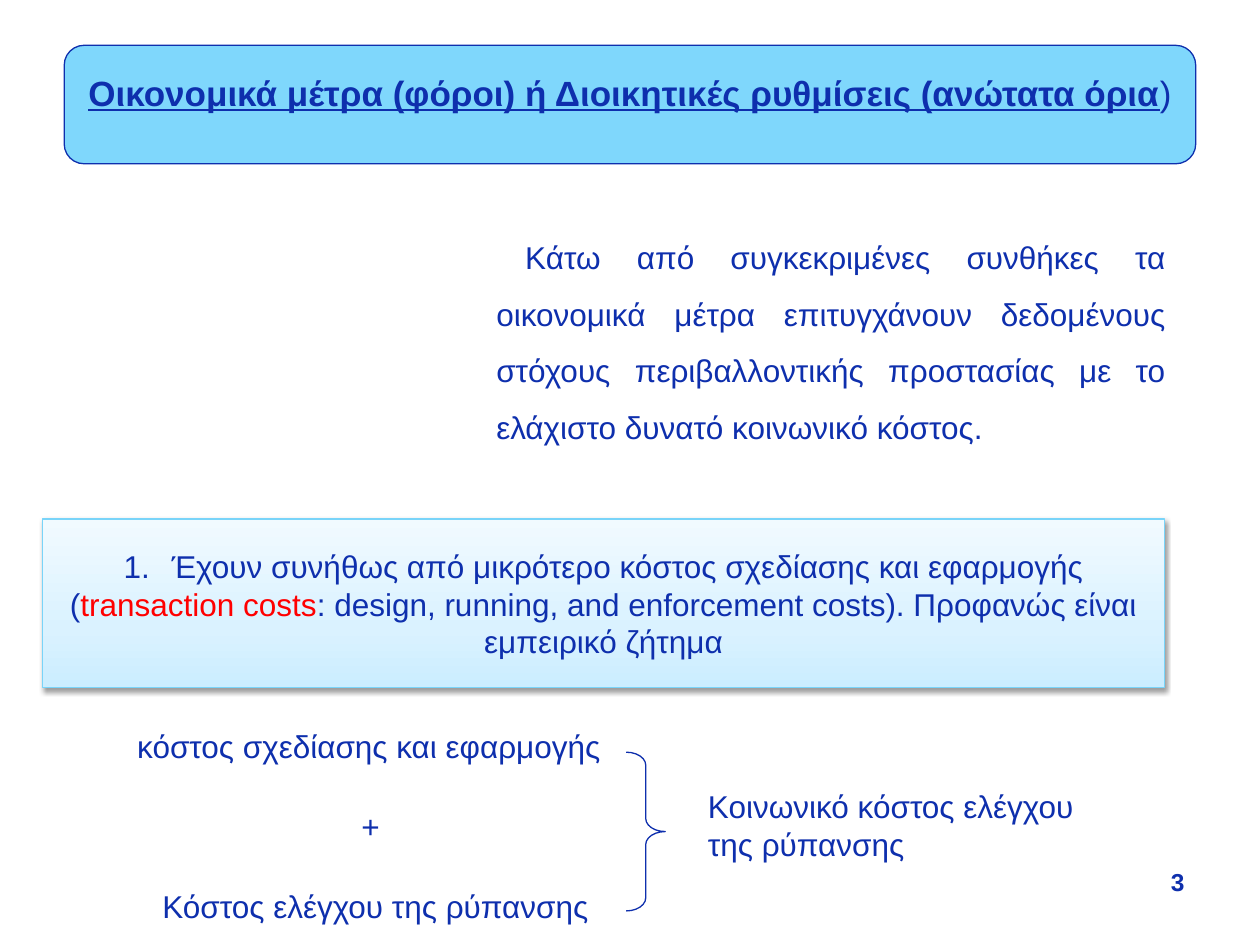
from copy import deepcopy

from lxml import etree
from pptx import Presentation
from pptx.dml.color import RGBColor
from pptx.enum.shapes import MSO_SHAPE
from pptx.enum.text import MSO_ANCHOR, PP_ALIGN
from pptx.oxml.ns import qn
from pptx.util import Inches, Pt

LEFT, CENTER, RIGHT, JUSTIFY = PP_ALIGN.LEFT, PP_ALIGN.CENTER, PP_ALIGN.RIGHT, PP_ALIGN.JUSTIFY
TOP, MIDDLE = MSO_ANCHOR.TOP, MSO_ANCHOR.MIDDLE
ROUNDED, RECTANGLE, BRACE = MSO_SHAPE.ROUNDED_RECTANGLE, MSO_SHAPE.RECTANGLE, MSO_SHAPE.RIGHT_BRACE

THEME = {
    "font": "Arial", "title": 20, "body": 18, "number": 14,
    "ink": "0E2FAD", "accent": "FF0000", "title_fill": "7FD7FC", "panel_line": "79D4F9",
    "panel_stops": [(0, "CBEDFF"), (0.35, "DAF2FF"), (1, "F1FAFF")],
    "line_width": 0.75,
}

# Content: a paragraph is a list of (text, format) runs
TITLE = [[("Οικονομικά μέτρα (φόροι) ή Διοικητικές ρυθμίσεις (ανώτατα όρια", {"bold": True, "underline": True}),
          (")", {})]]
STATEMENT = [[("Κάτω από συγκεκριμένες συνθήκες τα οικονομικά μέτρα επιτυγχάνουν δεδομένους στόχους "
               "περιβαλλοντικής προστασίας με το ελάχιστο δυνατό κοινωνικό κόστος.", {})]]
PANEL = [
    [("Έχουν συνήθως από μικρότερο κόστος σχεδίασης και εφαρμογής", {})],
    [("(", {}), ("transaction costs", {"color": "accent"}),
     (": design, running, and enforcement costs). Προφανώς είναι", {})],
    [("εμπειρικό ζήτημα", {})],
]
COSTS = [  # text, left, width
    ("κόστος σχεδίασης και εφαρμογής", 9.9, 38.9),
    ("+", 27.7, 3.5),
    ("Κόστος ελέγχου της ρύπανσης", 11.9, 36),
]
RESULT = [[("Κοινωνικό κόστος ελέγχου", {})], [("της ρύπανσης", {})]]
PAGE_NUMBER = [[("3", {"bold": True})]]

# Layout: left, top, width, height in hundredths of the slide
AREAS = {
    "title": (5.1, 4.8, 89.8, 12.53),
    "statement": (38.4, 22.53, 55.1, 24.8),
    "panel": (3.4, 54.93, 89, 17.87),
    "brace": (49.7, 79.6, 3.1, 16.8),
    "result": (55.2, 82.67, 31.9, 9.33),
    "number": (71.7, 91.07, 23.3, 6.93),
}
COST_TOP, COST_STEP, COST_HEIGHT = 76.27, 8.47, 5.33
PANEL_INDENT = Inches(0.38)

presentation = Presentation()
presentation.slide_width, presentation.slide_height = Inches(10), Inches(7.5)
slide = presentation.slides.add_slide(presentation.slide_layouts[6])


def color(name):
    return RGBColor.from_string(THEME.get(name, name))


def place(area):
    left, top, width, height = area
    across, down = presentation.slide_width / 100, presentation.slide_height / 100
    return [round(value) for value in (left * across, top * down, width * across, height * down)]


def write(shape, paragraphs, size="body", align=LEFT, anchor=TOP, wrap=False):
    frame = shape.text_frame
    frame.word_wrap, frame.vertical_anchor = wrap, anchor
    for index, runs in enumerate(paragraphs):
        paragraph = frame.add_paragraph() if index else frame.paragraphs[0]
        paragraph.alignment = align
        for text, style in runs:
            run = paragraph.add_run()
            run.text = text
            font = run.font
            font.name, font.size = THEME["font"], Pt(THEME[size])
            font.bold, font.underline = style.get("bold", False), style.get("underline", False)
            font.color.rgb = color(style.get("color", "ink"))
    return frame


def add_text(area, paragraphs, **options):
    return write(slide.shapes.add_textbox(*place(area)), paragraphs, **options)


def add_outlined(kind, area, line="ink"):
    shape = slide.shapes.add_shape(kind, *place(area))
    shape.shadow.inherit = False
    shape.line.color.rgb = color(line)
    shape.line.width = Pt(THEME["line_width"])
    return shape


def fill_gradient(shape, stops):
    shape.fill.gradient()
    shape.fill.gradient_angle = 90
    stop_list = shape._element.spPr.find(".//" + qn("a:gsLst"))
    stop_list.insert(1, deepcopy(stop_list[0]))
    for stop, (position, name) in zip(shape.fill.gradient_stops, stops):
        stop.color.rgb = color(name)
        stop.position = position


def add_soft_shadow(shape):
    effects = shape._element.spPr.find(qn("a:effectLst"))
    shadow = etree.SubElement(effects, qn("a:outerShdw"), blurRad=str(Pt(3.1)), dist=str(Pt(1.6)),
                              dir="5400000", rotWithShape="0")
    black = etree.SubElement(shadow, qn("a:srgbClr"), val="000000")
    etree.SubElement(black, qn("a:alpha"), val="38000")


# Statement and page number
statement = add_text(AREAS["statement"], STATEMENT, align=JUSTIFY, wrap=True).paragraphs[0]
statement.line_spacing = 1.5
statement._p.get_or_add_pPr().set("indent", str(Inches(0.23)))
add_text(AREAS["number"], PAGE_NUMBER, size="number", align=RIGHT, wrap=True)

# Title banner
banner = add_outlined(ROUNDED, AREAS["title"])
banner.adjustments[0] = 0.167
banner.fill.solid()
banner.fill.fore_color.rgb = color("title_fill")
write(banner, TITLE, size="title", align=CENTER).margin_top = Inches(0.16)

# Numbered panel
panel = add_outlined(RECTANGLE, AREAS["panel"], line="panel_line")
fill_gradient(panel, THEME["panel_stops"])
add_soft_shadow(panel)
panel_paragraphs = write(panel, PANEL, align=CENTER, anchor=MIDDLE).paragraphs
for paragraph in panel_paragraphs:
    properties = paragraph._p.get_or_add_pPr()
    properties.set("marL", str(PANEL_INDENT))
    properties.set("indent", str(-PANEL_INDENT))
etree.SubElement(panel_paragraphs[0]._p.pPr, qn("a:buAutoNum"), type="arabicPeriod")

# Costs, brace and their sum
for row, (text, left, width) in enumerate(COSTS):
    add_text((left, COST_TOP + row * COST_STEP, width, COST_HEIGHT), [[(text, {})]])
brace = add_outlined(BRACE, AREAS["brace"])
brace.adjustments[0] = 0.334
brace.fill.background()
add_text(AREAS["result"], RESULT)

presentation.save("out.pptx")
